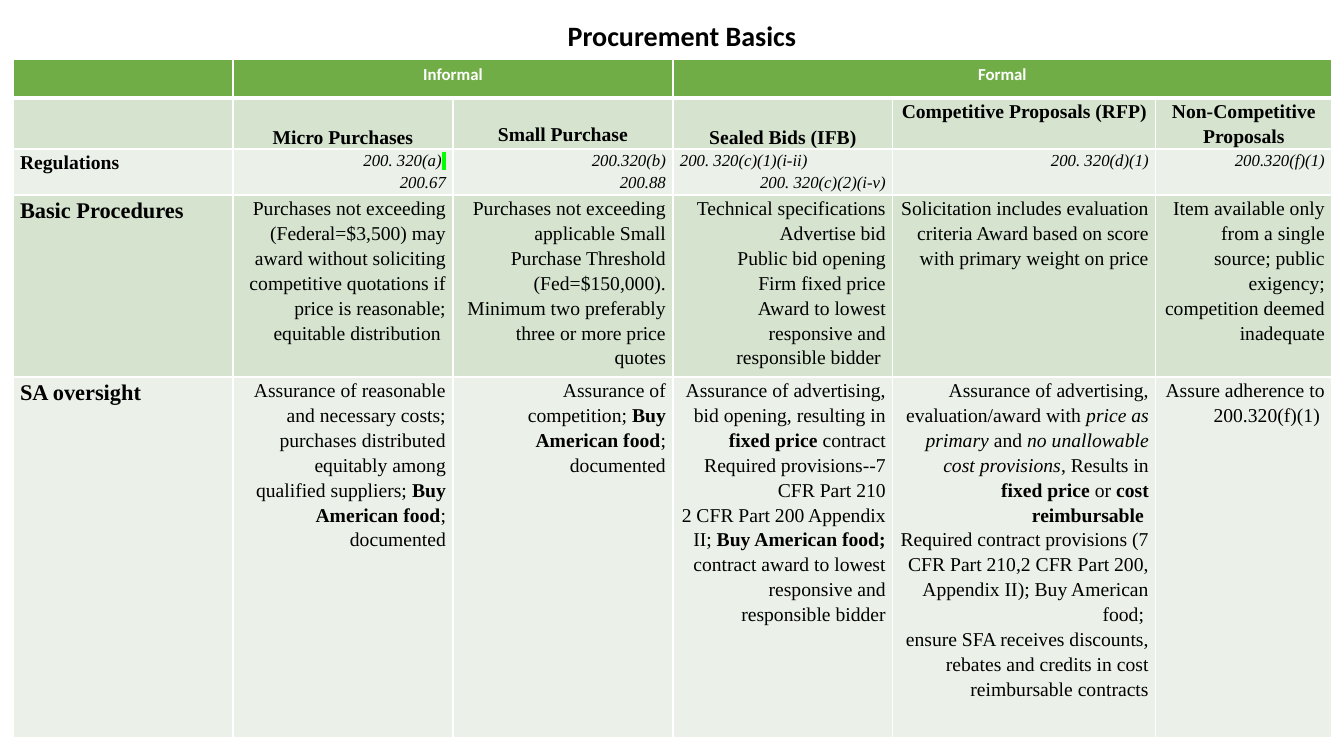
from lxml.etree import SubElement
from pptx import Presentation
from pptx.dml.color import RGBColor
from pptx.enum.text import MSO_ANCHOR as Anchor, MSO_AUTO_SIZE as AutoSize, PP_ALIGN as Align
from pptx.oxml.ns import qn
from pptx.util import Emu, Pt

# Content: *bold*, _italic_; each list entry is one paragraph
TITLE = "Procurement Basics"
GROUPS = [("Informal", 1, 2), ("Formal", 3, 5)]  # text, first and last column
METHODS = ["Micro Purchases", "Small Purchase", "Sealed Bids (IFB)",
           "Competitive Proposals (RFP)", "Non-Competitive Proposals"]
REGULATIONS = [
    ["_200. 320(a)_", "_200.67_"],
    ["_200.320(b)_", "_200.88_"],
    ["_200. 320(c)(1)(i-ii)_", "_200. 320(c)(2)(i-v)_"],
    ["_200. 320(d)(1)_"],
    ["_200.320(f)(1)_"],
]
PROCEDURES = [
    ["Purchases not exceeding (Federal=$3,500) may award without soliciting competitive "
     "quotations if price is reasonable; equitable distribution "],
    ["Purchases not exceeding applicable Small Purchase Threshold (Fed=$150,000). "
     "Minimum two preferably three or more price quotes"],
    ["Technical specifications", "Advertise bid", "Public bid opening", "Firm fixed price",
     "Award to lowest responsive and responsible bidder "],
    ["Solicitation includes evaluation criteria Award based on score with primary weight "
     "on price"],
    ["Item available only from a single source; public exigency; competition deemed "
     "inadequate"],
]
OVERSIGHT = [
    ["Assurance of reasonable and necessary costs; purchases distributed equitably among "
     "qualified suppliers; *Buy American food*; documented"],
    ["Assurance of competition; *Buy American food*; documented"],
    ["Assurance of advertising, bid opening, resulting in *fixed price* contract Required "
     "provisions--7 CFR Part 210",
     "2 CFR Part 200 Appendix II; *Buy American food; *contract award to lowest responsive "
     "and responsible bidder"],
    ["Assurance of advertising, evaluation/award with _price as primary_ and "
     "_no unallowable cost provisions_, Results in *fixed price* or *cost reimbursable *",
     "Required contract provisions (7 CFR Part 210,2 CFR Part 200, Appendix II); "
     "Buy American food; ",
     "ensure SFA receives discounts, rebates and credits in cost reimbursable contracts"],
    ["Assure adherence to 200.320(f)(1) "],
]
# Label, label size, body size, cells
BODY = [("Regulations", 14, 12, REGULATIONS),
        ("Basic Procedures", 16, 14, PROCEDURES),
        ("SA oversight", 16, 14, OVERSIGHT)]

# Layout in px
SLIDE = (1344, 756)
TITLE_BOX = (330, 14, 704, 44)
TABLE_AT = (13, 59)
COLUMNS = [220, 220, 220, 220, 263, 176]
ROWS = [39, 51, 46, 182, 361]
SIDE_MARGIN = 7
COLORS = {"header": "70AD47", "dark band": "D5E3CF", "light band": "EBF1E9",
          "white": "FFFFFF", "text": "000000", "highlight": "00FF00"}
SCALE = 12192000 / SLIDE[0]


def px(value):
    return Emu(round(value * SCALE))


def color(name):
    return RGBColor.from_string(COLORS[name])


def add_run(paragraph, text, size, font, ink="text", bold=False, italic=False):
    run = paragraph.add_run()
    run.text = text
    run.font.size, run.font.name = Pt(size), font
    run.font.bold, run.font.italic = bold, italic
    run.font.color.rgb = color(ink)
    return run


def write_cell(cell, paragraphs, size, align):
    """Fill a body cell with marked-up paragraphs."""
    cell.margin_left = cell.margin_right = px(SIDE_MARGIN)
    cell.margin_top = cell.margin_bottom = 0
    frame = cell.text_frame
    for index, text in enumerate(paragraphs):
        paragraph = frame.add_paragraph() if index else frame.paragraphs[0]
        paragraph.alignment, paragraph.line_spacing = align, 1.15
        for b, part in enumerate(text.split("*")):
            for i, piece in enumerate(part.split("_")):
                if piece:
                    add_run(paragraph, piece, size, "Times New Roman",
                            bold=b % 2 == 1, italic=i % 2 == 1)


def set_borders(cell, bottom):
    """White borders; they must stand before the fill in the cell properties."""
    properties = cell._tc.get_or_add_tcPr()
    for index, side in enumerate(("lnL", "lnR", "lnT", "lnB")):
        width = bottom if side == "lnB" else 1
        line = SubElement(properties, qn(f"a:{side}"), w=str(Pt(width)))
        fill = SubElement(line, qn("a:solidFill"))
        SubElement(fill, qn("a:srgbClr"), val=COLORS["white"])
        properties.insert(index, line)


def build_table(slide):
    frame = slide.shapes.add_table(len(ROWS), len(COLUMNS), *map(px, TABLE_AT),
                                   px(sum(COLUMNS)), px(sum(ROWS)))
    table = frame.table
    for column, width in zip(table.columns, COLUMNS):
        column.width = px(width)
    for row, height in zip(table.rows, ROWS):
        row.height = px(height)

    # Fills and borders
    for r, row in enumerate(table.rows):
        band = "header" if r == 0 else "dark band" if r % 2 else "light band"
        for cell in row.cells:
            cell.fill.solid()
            cell.fill.fore_color.rgb = color(band)
            set_borders(cell, 3 if r == 0 else 1)
            # Small empty lines keep the rows at their set height
            SubElement(cell.text_frame.paragraphs[0]._p, qn("a:endParaRPr"), sz="1200")

    # Group headings
    for text, first, last in GROUPS:
        cell = table.cell(0, first)
        cell.merge(table.cell(0, last))
        paragraph = cell.text_frame.paragraphs[0]
        paragraph.alignment = Align.CENTER
        add_run(paragraph, text, 12, "Calibri", "white", bold=True)

    # Purchase methods: the first three sit low in the row
    for column, text in enumerate(METHODS, 1):
        cell = table.cell(1, column)
        write_cell(cell, [f"*{text}*"], 14, Align.CENTER)
        if column <= 3:
            cell.vertical_anchor = Anchor.BOTTOM
    table.cell(1, 2).margin_bottom = px(3)

    # Body rows
    for r, (label, label_size, size, cells) in enumerate(BODY, 2):
        write_cell(table.cell(r, 0), [f"*{label}*"], label_size, Align.LEFT)
        for column, paragraphs in enumerate(cells, 1):
            write_cell(table.cell(r, column), paragraphs, size, Align.RIGHT)
    table.cell(2, 3).text_frame.paragraphs[0].alignment = Align.LEFT

    # Highlighted space after the first regulation
    marked = add_run(table.cell(2, 1).text_frame.paragraphs[0], " ", 12,
                     "Times New Roman", italic=True)
    highlight = SubElement(marked.font._element, qn("a:highlight"))
    SubElement(highlight, qn("a:srgbClr"), val=COLORS["highlight"])
    marked.font.fill._xPr.find(qn("a:solidFill")).addnext(highlight)


def build_title(slide):
    box = slide.shapes.add_textbox(*map(px, TITLE_BOX))
    frame = box.text_frame
    frame.word_wrap, frame.auto_size = True, AutoSize.SHAPE_TO_FIT_TEXT
    paragraph = frame.paragraphs[0]
    paragraph.alignment = Align.CENTER
    add_run(paragraph, TITLE, 20, "Calibri", bold=True)


def main():
    presentation = Presentation()
    presentation.slide_width, presentation.slide_height = map(px, SLIDE)
    slide = presentation.slides.add_slide(presentation.slide_layouts[6])
    build_table(slide)
    build_title(slide)
    presentation.save("out.pptx")


if __name__ == "__main__":
    main()
